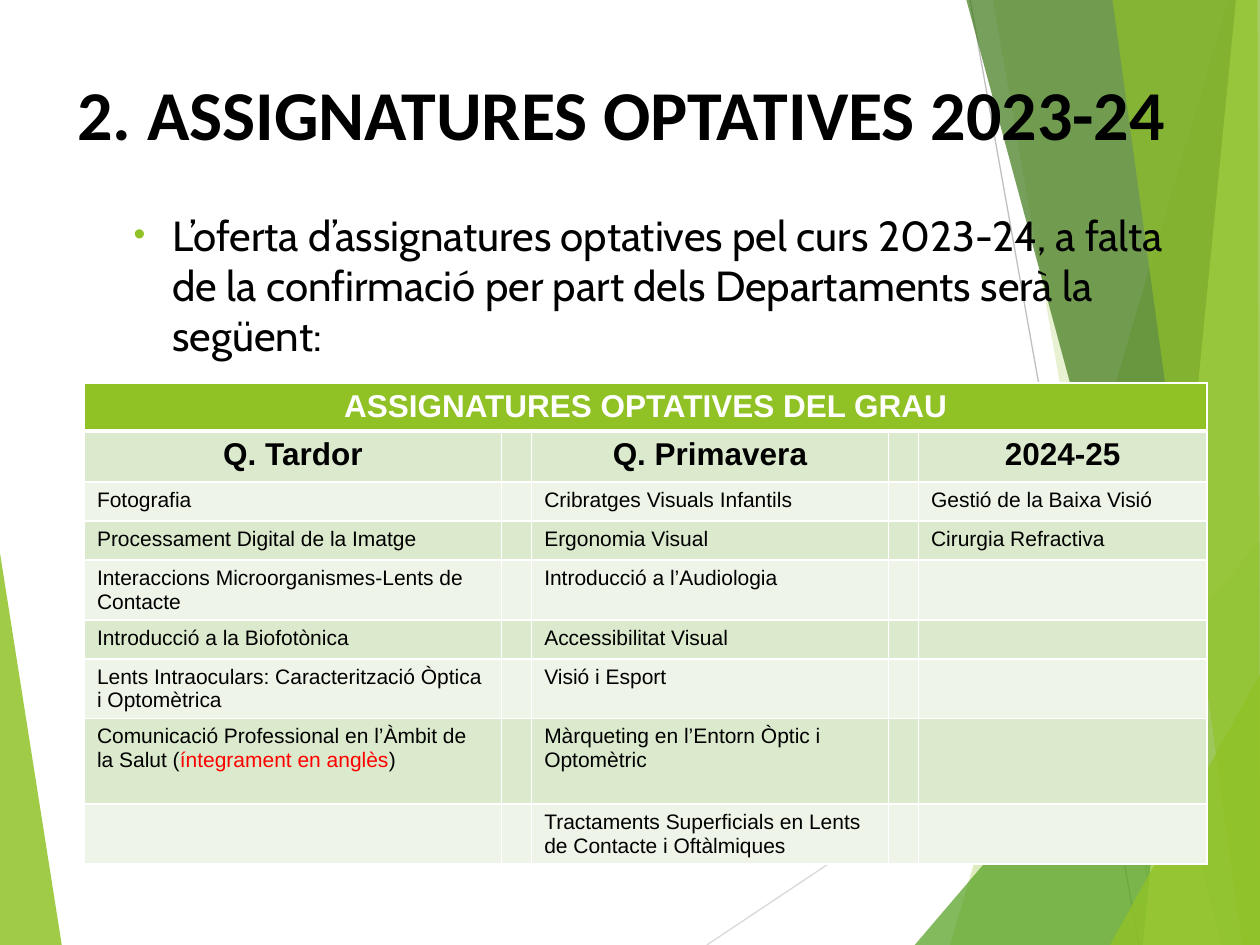
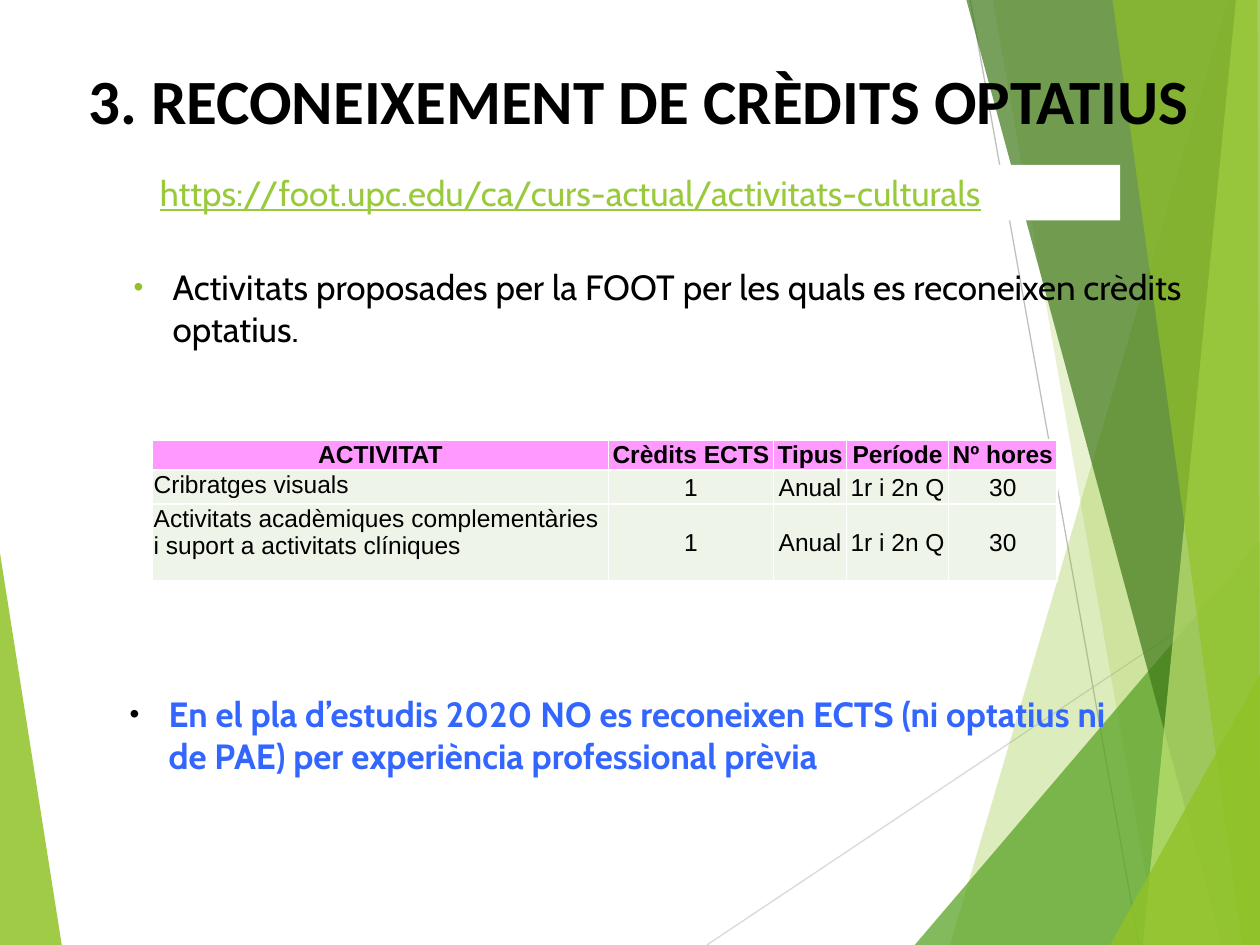
from dataclasses import dataclass

from lxml import etree
from pptx import Presentation
from pptx.dml.color import RGBColor
from pptx.enum.shapes import MSO_CONNECTOR, MSO_SHAPE
from pptx.enum.text import MSO_ANCHOR, MSO_AUTO_SIZE, PP_ALIGN
from pptx.oxml.ns import qn
from pptx.util import Pt

RECTANGLE = MSO_SHAPE.RECTANGLE
STRAIGHT = MSO_CONNECTOR.STRAIGHT
TOP, MIDDLE = MSO_ANCHOR.TOP, MSO_ANCHOR.MIDDLE
LEFT, CENTER = PP_ALIGN.LEFT, PP_ALIGN.CENTER
NO_AUTOFIT = MSO_AUTO_SIZE.NONE
EMU_PER_PX = 9144
TITLE_AND_CONTENT = 1


@dataclass(frozen=True)
class Theme:
    green: str = "90C226"
    mid_green: str = "54A021"
    dark_green: str = "3F7819"
    pale_green: str = "C0E474"
    link: str = "99CA3C"
    band: str = "DBE9CD"
    light_band: str = "EEF4E8"
    pink: str = "FF99FF"
    red: str = "FF0000"
    blue: str = "3366FF"
    white: str = "FFFFFF"
    black: str = "000000"
    light_line: str = "D9D9D9"
    line: str = "BFBFBF"
    title_font: str = "Calibri"
    body_font: str = "Cabin"
    table_font: str = "Arial"
    title_size: int = 40
    long_title_size: int = 36
    lead_size: int = 24
    body_size: int = 20
    table_title_size: int = 18
    activity_size: int = 14
    subject_size: int = 12


@dataclass(frozen=True)
class CellLook:
    size: int
    fill: str
    bold: bool = False
    color: str = Theme.black
    align: PP_ALIGN = LEFT
    anchor: MSO_ANCHOR = TOP


THEME = Theme()

FACETS = [
    ([(0, 439), (49, 750), (0, 750)], THEME.green, 85),
    ([(975, 0), (754, 750), (1000, 750), (1000, 0)], THEME.green, 30),
    ([(788, 0), (919, 750), (1000, 750), (1000, 0)], THEME.green, 20),
    ([(726, 750), (1000, 429), (1000, 750)], THEME.mid_green, 72),
    ([(767, 0), (970, 750), (1000, 750), (1000, 0)], THEME.dark_green, 70),
    ([(981, 0), (907, 750), (1000, 750), (1000, 0)], THEME.pale_green, 70),
    ([(883, 0), (986, 750), (1000, 750), (998, 0)], THEME.green, 65),
    ([(881, 750), (1000, 535), (1000, 750)], THEME.green, 80),
]
RAYS = [((561, 750), (1000, 457), THEME.light_line), ((770, 0), (904, 750), THEME.line)]

SUBJECTS = [
    ["ASSIGNATURES OPTATIVES DEL GRAU", "", "", "", ""],
    ["Q. Tardor", "", "Q. Primavera", "", "2024-25"],
    ["Fotografia", "", "Cribratges Visuals Infantils", "", "Gestió de la Baixa Visió"],
    ["Processament Digital de la Imatge", "", "Ergonomia Visual", "", "Cirurgia Refractiva"],
    ["Interaccions Microorganismes-Lents de Contacte", "", "Introducció a l’Audiologia", "", ""],
    ["Introducció a la Biofotònica", "", "Accessibilitat Visual", "", ""],
    ["Lents Intraoculars: Caracterització Òptica i Optomètrica", "", "Visió i Esport", "", ""],
    [("Comunicació Professional en l’Àmbit de la Salut (", "íntegrament en anglès", ")"), "",
     "Màrqueting en l’Entorn Òptic i Optomètric", "", ""],
    ["", "", "Tractaments Superficials en Lents de Contacte i Oftàlmiques", "", ""],
]
ACTIVITIES = [
    ["ACTIVITAT", "Crèdits ECTS", "Tipus", "Període", "Nº hores"],
    ["Cribratges visuals", "1", "Anual", "1r i 2n Q", "30"],
    ["Activitats acadèmiques complementàries i suport a activitats clíniques",
     "1", "Anual", "1r i 2n Q", "30"],
]


def px(length):
    return length * EMU_PER_PX


def add_xml(parent, tag, **attributes):
    return etree.SubElement(parent, qn(tag), attributes)


class Deck:
    def __init__(self, theme):
        self.theme = theme
        self.presentation = Presentation()
        self.presentation.slide_width = px(1000)
        self.presentation.slide_height = px(750)
        self.layout = self.presentation.slide_layouts[TITLE_AND_CONTENT]
        self.slide = None

    def start_slide(self):
        self.slide = self.presentation.slides.add_slide(self.layout)

    def place(self, shape, box):
        shape.left, shape.top, shape.width, shape.height = map(px, box)

    def format_run(self, run, font, size, color, bold=False):
        run.font.name = font
        run.font.size = Pt(size)
        run.font.bold = bold
        run.font.color.rgb = RGBColor.from_string(color)

    def move_to_layout(self, shape, number):
        shape.element.xpath(".//p:cNvPr")[0].set("id", str(100 + number))
        self.layout.shapes.element.insert_element_before(shape.element, "p:extLst")

    def facet(self, points, color, opacity):
        builder = self.slide.shapes.build_freeform(*points[0], scale=EMU_PER_PX)
        builder.add_line_segments(points[1:], close=True)
        shape = builder.convert_to_shape()
        shape.shadow.inherit = False
        shape.fill.solid()
        shape.fill.fore_color.rgb = RGBColor.from_string(color)
        solid = shape.element.spPr.find(qn("a:solidFill"))
        add_xml(solid[0], "a:alpha", val=str(opacity * 1000))
        shape.line.fill.background()
        return shape

    def ray(self, start, end, color):
        connector = self.slide.shapes.add_connector(STRAIGHT, *map(px, start + end))
        connector.line.color.rgb = RGBColor.from_string(color)
        connector.line.width = Pt(0.75)
        add_xml(connector.element.spPr, "a:effectLst")
        return connector

    def background(self):
        first, *others = FACETS
        pieces = [self.facet(*first)]
        pieces += [self.ray(*ray) for ray in RAYS]
        pieces += [self.facet(*facet) for facet in others]
        for number, piece in enumerate(pieces):
            self.move_to_layout(piece, number)

    def title(self, text, box, size):
        shape = self.slide.shapes.title
        self.place(shape, box)
        frame = shape.text_frame
        frame.text = text
        frame.auto_size = NO_AUTOFIT
        frame.vertical_anchor = TOP
        frame.paragraphs[0].alignment = CENTER
        self.format_run(frame.paragraphs[0].runs[0], self.theme.title_font, size, self.theme.black)
        frame.paragraphs[0].runs[0].font.bold = True

    def bullet(self, shape, text, size, color, bullet_color, bold=False):
        frame = shape.text_frame
        frame.text = text
        frame.word_wrap = True
        frame.auto_size = NO_AUTOFIT
        paragraph = frame.paragraphs[0]
        paragraph.level = 1
        properties = paragraph._p.get_or_add_pPr()
        properties.set("marL", str(px(81)))
        properties.set("indent", str(px(-31)))
        add_xml(add_xml(properties, "a:buClr"), "a:srgbClr", val=bullet_color)
        add_xml(properties, "a:buSzPct", val="80000")
        add_xml(properties, "a:buFont", typeface=self.theme.table_font)
        add_xml(properties, "a:buChar", char="•")
        paragraph.space_before = Pt(0)
        self.format_run(paragraph.runs[0], self.theme.body_font, size, color, bold)

    def body(self, text, box, size):
        shape = self.slide.placeholders[1]
        self.place(shape, box)
        self.bullet(shape, text, size, self.theme.black, self.theme.green)

    def note(self, text, box):
        shape = self.slide.shapes.add_textbox(*map(px, box))
        self.bullet(shape, text, self.theme.body_size, self.theme.blue, self.theme.black, bold=True)

    def address(self, text, box):
        shape = self.slide.shapes.add_shape(RECTANGLE, *map(px, box))
        shape.shadow.inherit = False
        shape.fill.solid()
        shape.fill.fore_color.rgb = RGBColor.from_string(self.theme.white)
        shape.line.fill.background()
        frame = shape.text_frame
        frame.text = text
        frame.word_wrap = True
        frame.vertical_anchor = TOP
        frame.paragraphs[0].alignment = LEFT
        run = frame.paragraphs[0].runs[0]
        self.format_run(run, self.theme.body_font, self.theme.body_size, self.theme.link)
        run.font.underline = True

    def cell_borders(self, cell, top, bottom):
        properties = cell._tc.get_or_add_tcPr()
        for side, width in (("L", 1), ("R", 1), ("T", top), ("B", bottom)):
            border = add_xml(properties, f"a:ln{side}", w=str(Pt(width)))
            add_xml(add_xml(border, "a:solidFill"), "a:srgbClr", val=self.theme.white)

    def cell_text(self, cell, content, look):
        paragraph = cell.text_frame.paragraphs[0]
        paragraph.alignment = look.align
        if not content:
            add_xml(paragraph._p, "a:endParaRPr", sz=str(look.size * 100))
            return
        pieces = (content,) if isinstance(content, str) else content
        for number, piece in enumerate(pieces):
            run = paragraph.add_run()
            run.text = piece
            color = self.theme.red if number % 2 else look.color
            self.format_run(run, self.theme.table_font, look.size, color, look.bold)

    def table(self, rows, corner, widths, heights, look_at, margins=None, header_rule=1):
        box = (*corner, sum(widths), sum(heights))
        table = self.slide.shapes.add_table(len(rows), len(widths), *map(px, box)).table
        table.first_row = table.horz_banding = False
        for column, width in zip(table.columns, widths):
            column.width = px(width)
        for row, height in zip(table.rows, heights):
            row.height = px(height)
        for row_number, row in enumerate(rows):
            for column_number, content in enumerate(row):
                cell = table.cell(row_number, column_number)
                look = look_at(row_number, column_number)
                self.cell_borders(cell, header_rule if row_number == 1 else 1,
                                  header_rule if row_number == 0 else 1)
                cell.fill.solid()
                cell.fill.fore_color.rgb = RGBColor.from_string(look.fill)
                cell.vertical_anchor = look.anchor
                if margins:
                    (cell.margin_left, cell.margin_top,
                     cell.margin_right, cell.margin_bottom) = map(px, margins)
                self.cell_text(cell, content, look)
        return table


def subject_look(row, column):
    if row == 0:
        return CellLook(THEME.table_title_size, THEME.green, True, THEME.white, CENTER)
    if row == 1:
        return CellLook(THEME.table_title_size, THEME.band, True, align=CENTER)
    return CellLook(THEME.subject_size, THEME.band if row % 2 else THEME.light_band)


def activity_look(row, column):
    if row == 0:
        return CellLook(THEME.activity_size, THEME.pink, True, align=CENTER)
    if column == 0:
        return CellLook(THEME.activity_size, THEME.light_band)
    return CellLook(THEME.activity_size, THEME.light_band, align=CENTER, anchor=MIDDLE)


def electives_slide(deck):
    deck.start_slide()
    deck.title("2. ASSIGNATURES OPTATIVES 2023-24", (28, 51, 930, 77), THEME.title_size)
    deck.body("L’oferta d’assignatures optatives pel curs 2023-24, a falta de la confirmació "
              "per part dels Departaments serà la següent:", (46, 161, 914, 95), THEME.lead_size)
    table = deck.table(SUBJECTS, (67, 304), [331, 24, 283, 24, 229],
                       [38, 40, 31, 31, 47, 31, 47, 68, 47], subject_look, header_rule=3)
    table.cell(0, 0).merge(table.cell(0, 4))


def credits_slide(deck):
    deck.start_slide()
    deck.title("3. RECONEIXEMENT DE CRÈDITS OPTATIUS", (41, 44, 932, 71), THEME.long_title_size)
    deck.body("Activitats proposades per la FOOT per les quals es reconeixen crèdits optatius.",
              (46, 206, 914, 82), THEME.body_size)
    deck.note("En el pla d’estudis 2020 NO es reconeixen ECTS (ni optatius ni de PAE) "
              "per experiència professional prèvia", (43, 545, 874, 90))
    deck.address("https://foot.upc.edu/ca/curs-actual/activitats-culturals", (117, 131, 772, 44))
    deck.table(ACTIVITIES, (121, 349), [362, 131, 58, 81, 86], [24, 27, 61],
               activity_look, margins=(1, 1, 1, 0))


def main():
    deck = Deck(THEME)
    electives_slide(deck)
    deck.background()
    credits_slide(deck)
    deck.presentation.save("out.pptx")


if __name__ == "__main__":
    main()
